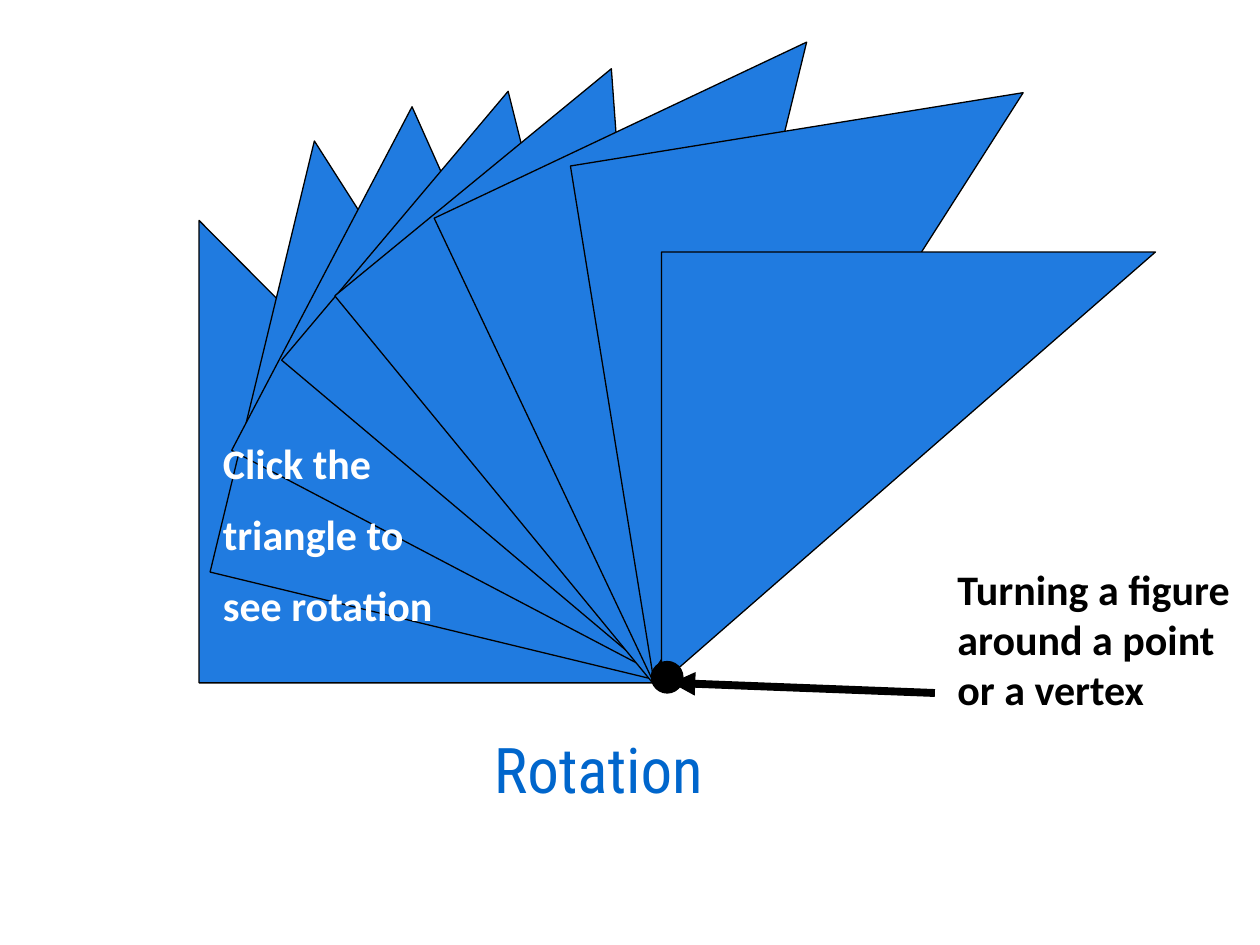
from dataclasses import dataclass

from lxml.etree import SubElement
from pptx import Presentation
from pptx.dml.color import RGBColor
from pptx.enum.shapes import MSO_CONNECTOR, MSO_SHAPE
from pptx.enum.text import MSO_ANCHOR, PP_ALIGN
from pptx.oxml.ns import qn
from pptx.util import Inches, Pt


@dataclass(frozen=True)
class Theme:
    """Colours, fonts and sizes of the slide."""
    triangle: RGBColor = RGBColor(0x20, 0x7B, 0xE0)
    title: RGBColor = RGBColor(0x00, 0x66, 0xCC)
    black: RGBColor = RGBColor(0, 0, 0)
    white: RGBColor = RGBColor(0xFF, 0xFF, 0xFF)
    title_font: str = "Roboto Condensed"
    body_font: str = "Calibri"
    title_size: int = 36
    body_size: int = 24
    outline: float = 0.75
    arrow: float = 4.5


THEME = Theme()

TRIANGLES = [
    (1.58, 1.75, 3.65, 3.67, 0),
    (2.03, 1.5, 3.66, 3.52, 13.6),
    (2.33, 1.58, 3.91, 3.08, 27.7),
    (2.68, 1.64, 3.86, 2.79, 40.1),
    (3.02, 1.58, 4.02, 2.84, 50.6),
    (3.77, 1.22, 4.03, 3.27, 64.7),
    (4.61, 1.22, 4.08, 3.64, 80.8),
    (5.5, 1.75, 3.42, 3.92, 90),
]


def style_runs(p, font, size, color, bold=False):
    """Format every run of a paragraph."""
    for r in p.runs:
        r.font.name = font
        r.font.size = Pt(size)
        r.font.bold = bold
        r.font.color.rgb = color


def add_figure(slide, kind, box, fill, rotation=0):
    """Add an outlined preset shape, optionally rotated."""
    sp = slide.shapes.add_shape(kind, *map(Inches, box))
    sp.shadow.inherit = False
    sp.rotation = rotation
    sp.fill.solid()
    sp.fill.fore_color.rgb = fill
    sp.line.color.rgb = THEME.black
    sp.line.width = Pt(THEME.outline)


def set_title(slide, text, box):
    """Place and format the title placeholder."""
    sp = slide.shapes.title
    sp.left, sp.top, sp.width, sp.height = map(Inches, box)
    tf = sp.text_frame
    tf.text = text
    tf.word_wrap = False
    tf.vertical_anchor = MSO_ANCHOR.TOP
    p = tf.paragraphs[0]
    p.alignment = PP_ALIGN.CENTER
    style_runs(p, THEME.title_font, THEME.title_size, THEME.title)


def add_note(slide, text, box, color):
    """Add a bold text box with half a line between paragraphs."""
    tf = slide.shapes.add_textbox(*map(Inches, box)).text_frame
    tf.word_wrap = True
    tf.text = text
    for p in tf.paragraphs:
        p.space_after = Pt(THEME.body_size / 2)
        style_runs(p, THEME.body_font, THEME.body_size, color, bold=True)


def add_arrow(slide, start, end):
    """Add a thick straight arrow pointing at its end."""
    line = slide.shapes.add_connector(
        MSO_CONNECTOR.STRAIGHT, *map(Inches, start + end))
    line.line.color.rgb = THEME.black
    line.line.width = Pt(THEME.arrow)
    SubElement(line.line._get_or_add_ln(), qn("a:tailEnd"), type="triangle")
    SubElement(line._element.spPr, qn("a:effectLst"))


def main():
    """Build the rotation slide."""
    prs = Presentation()
    prs.slide_width, prs.slide_height = Inches(10), Inches(7.5)
    slide = prs.slides.add_slide(prs.slide_layouts[5])
    for *box, angle in TRIANGLES:
        add_figure(slide, MSO_SHAPE.RIGHT_TRIANGLE, box, THEME.triangle, angle)
    set_title(slide, "Rotation", (3, 5.75, 3.5, 1))
    add_note(slide, "Click the\ntriangle to\nsee rotation",
             (1.67, 3.42, 2.33, 1.7), THEME.white)
    add_note(slide, "Turning a figure around a point or a vertex",
             (7.5, 4.42, 2.5, 1.7), THEME.black)
    add_arrow(slide, (7.42, 5.5), (5.33, 5.42))
    add_figure(slide, MSO_SHAPE.OVAL, (5.17, 5.25, 0.25, 0.25), THEME.black)
    prs.save("out.pptx")


if __name__ == "__main__":
    main()
